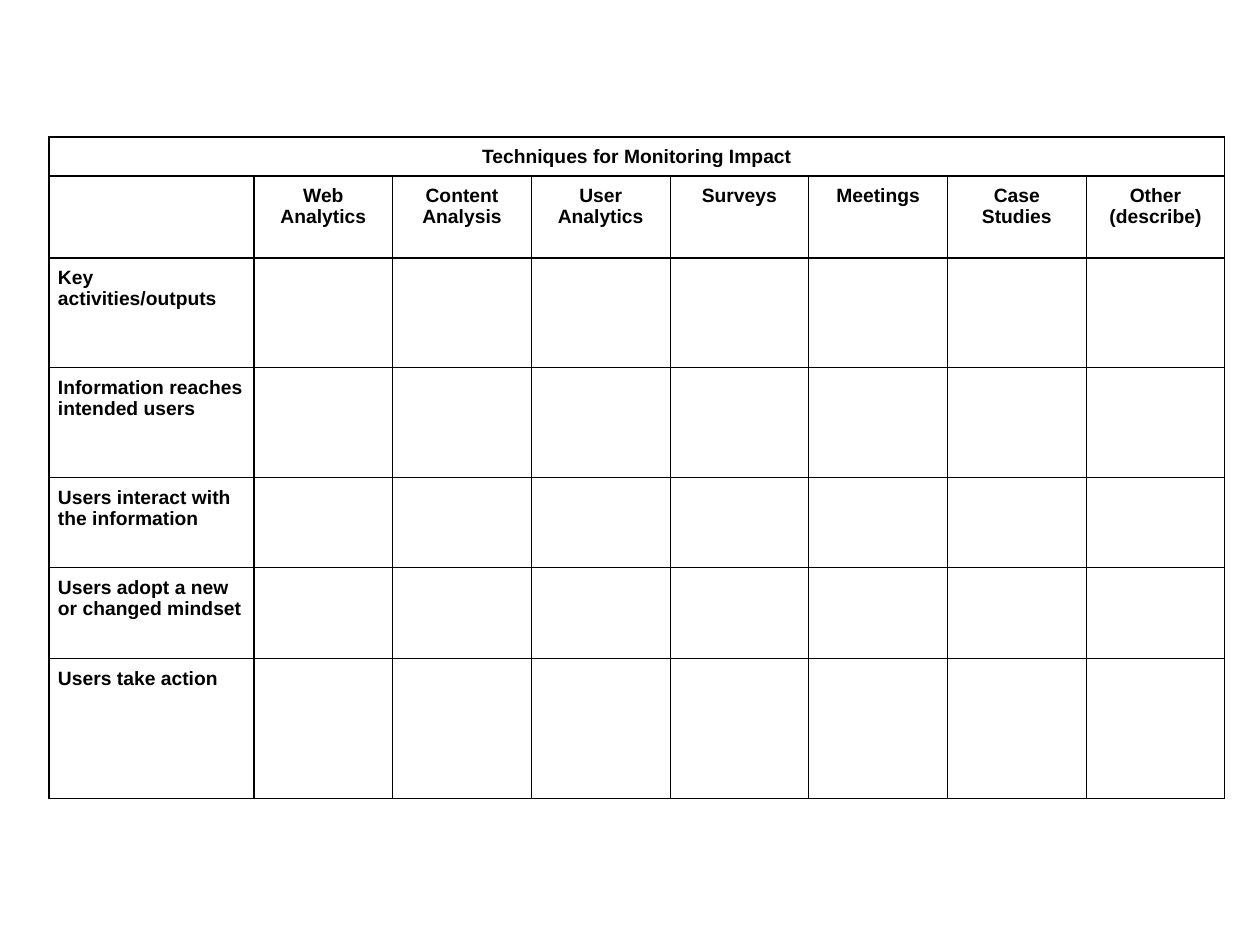
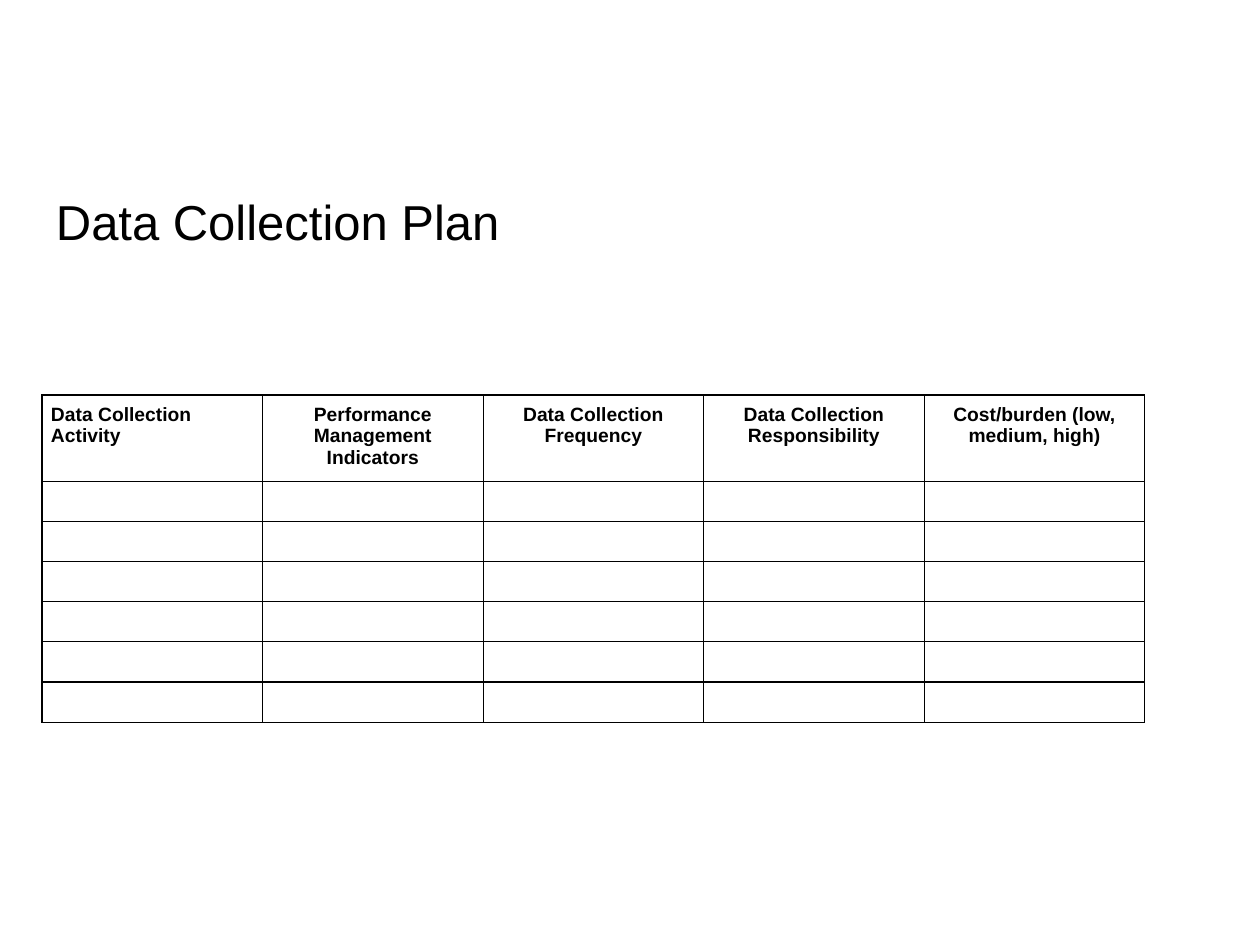
from pptx import Presentation
from pptx import util as u
from pptx.dml.color import RGBColor
from pptx.enum import text
from pptx.oxml.xmlchemy import OxmlElement

PX = u.Inches(1) // 126
FONT = "Arial"
BLACK = RGBColor(0x00, 0x00, 0x00)
WHITE = RGBColor(0xFF, 0xFF, 0xFF)
TABLE_SIZE = u.Pt(11)
TITLE_SIZE = u.Pt(28)
BORDER = u.Pt(0.75)
CELL_MARGIN = 9
CELL_BOTTOM = 8
ROW = 39
HEADER_ROW = 82

TECHNIQUES_TITLE = "Techniques for Monitoring Impact"
TECHNIQUES = ["Web Analytics", "Content Analysis", "User Analytics", "Surveys",
              "Meetings", "Case Studies", "Other (describe)"]
TECHNIQUES_WIDTH = 1176
STAGE_WIDTH = 205
STAGES = [
    ("Key activities/outputs", 110),
    ("Information reaches intended users", 110),
    ("Users interact with the information", 90),
    ("Users adopt a new or changed mindset", 91),
    ("Users take action", 140),
]

PLAN_TITLE = "Data Collection Plan"
PLAN_HEADERS = ["Data Collection Activity", "Performance Management Indicators",
                "Data Collection Frequency", "Data Collection Responsibility",
                "Cost/burden (low, medium, high)"]
PLAN_WIDTH = 1103
PLAN_BLANK_ROWS = 6


def px(n):
    return u.Emu(round(n * PX))


def write(p, words, size, bold=False):
    r = p.add_run()
    r.text = words
    r.font.name = FONT
    r.font.size = size
    r.font.bold = bold
    r.font.color.rgb = BLACK


def size_blank(p):
    end = OxmlElement("a:endParaRPr")
    end.set("sz", str(int(TABLE_SIZE.pt * 100)))
    latin = OxmlElement("a:latin")
    latin.set("typeface", FONT)
    end.append(latin)
    p._p.append(end)


def add_borders(cell):
    tc_pr = cell._tc.get_or_add_tcPr()
    for i, side in enumerate(("a:lnL", "a:lnR", "a:lnT", "a:lnB")):
        line = OxmlElement(side)
        line.set("w", str(BORDER))
        fill = OxmlElement("a:solidFill")
        color = OxmlElement("a:srgbClr")
        color.set("val", str(BLACK))
        fill.append(color)
        line.append(fill)
        tc_pr.insert(i, line)


def fill_cell(cell, words, centred):
    cell.fill.solid()
    cell.fill.fore_color.rgb = WHITE
    cell.margin_left = cell.margin_right = cell.margin_top = px(CELL_MARGIN)
    cell.margin_bottom = px(CELL_BOTTOM)
    add_borders(cell)
    p = cell.text_frame.paragraphs[0]
    if words:
        p.alignment = text.PP_ALIGN.CENTER if centred else text.PP_ALIGN.LEFT
        write(p, words, TABLE_SIZE, bold=True)
    else:
        size_blank(p)


def add_grid(s, left, top, widths, heights, rows, title=None):
    if title:
        rows = [[title] + [""] * (len(widths) - 1)] + rows
    table = s.shapes.add_table(len(heights), len(widths), px(left), px(top),
                               px(sum(widths)), px(sum(heights))).table
    table.first_row = table.horz_banding = False
    for column, width in zip(table.columns, widths):
        column.width = px(width)
    for row, height in zip(table.rows, heights):
        row.height = px(height)
    for i, row in enumerate(rows):
        for j, words in enumerate(row):
            fill_cell(table.cell(i, j), words, j > 0 or words == title)
    if title:
        table.cell(0, 0).merge(table.cell(0, len(widths) - 1))


def add_title(s, words):
    tf = s.shapes.add_textbox(px(43), px(179), px(1174), px(79)).text_frame
    tf.word_wrap = True
    tf.vertical_anchor = text.MSO_ANCHOR.TOP
    tf.margin_left = tf.margin_right = tf.margin_top = px(13)
    tf.margin_bottom = 0
    write(tf.paragraphs[0], words, TITLE_SIZE)


def build_techniques(s):
    count = len(TECHNIQUES)
    rows = [[""] + TECHNIQUES] + [[stage] + [""] * count for stage, _ in STAGES]
    widths = [STAGE_WIDTH] + [(TECHNIQUES_WIDTH - STAGE_WIDTH) / count] * count
    heights = [ROW, HEADER_ROW] + [height for _, height in STAGES]
    add_grid(s, 49, 137, widths, heights, rows, TECHNIQUES_TITLE)


def build_plan(s):
    add_title(s, PLAN_TITLE)
    count = len(PLAN_HEADERS)
    rows = [PLAN_HEADERS] + [[""] * count] * PLAN_BLANK_ROWS
    heights = [HEADER_ROW] + [ROW] * PLAN_BLANK_ROWS
    add_grid(s, 42, 395, [PLAN_WIDTH / count] * count, heights, rows)


def main():
    prs = Presentation()
    prs.slide_width, prs.slide_height = u.Inches(10), u.Inches(7.5)
    for build in (build_techniques, build_plan):
        build(prs.slides.add_slide(prs.slide_layouts[6]))
    prs.save("out.pptx")


if __name__ == "__main__":
    main()
